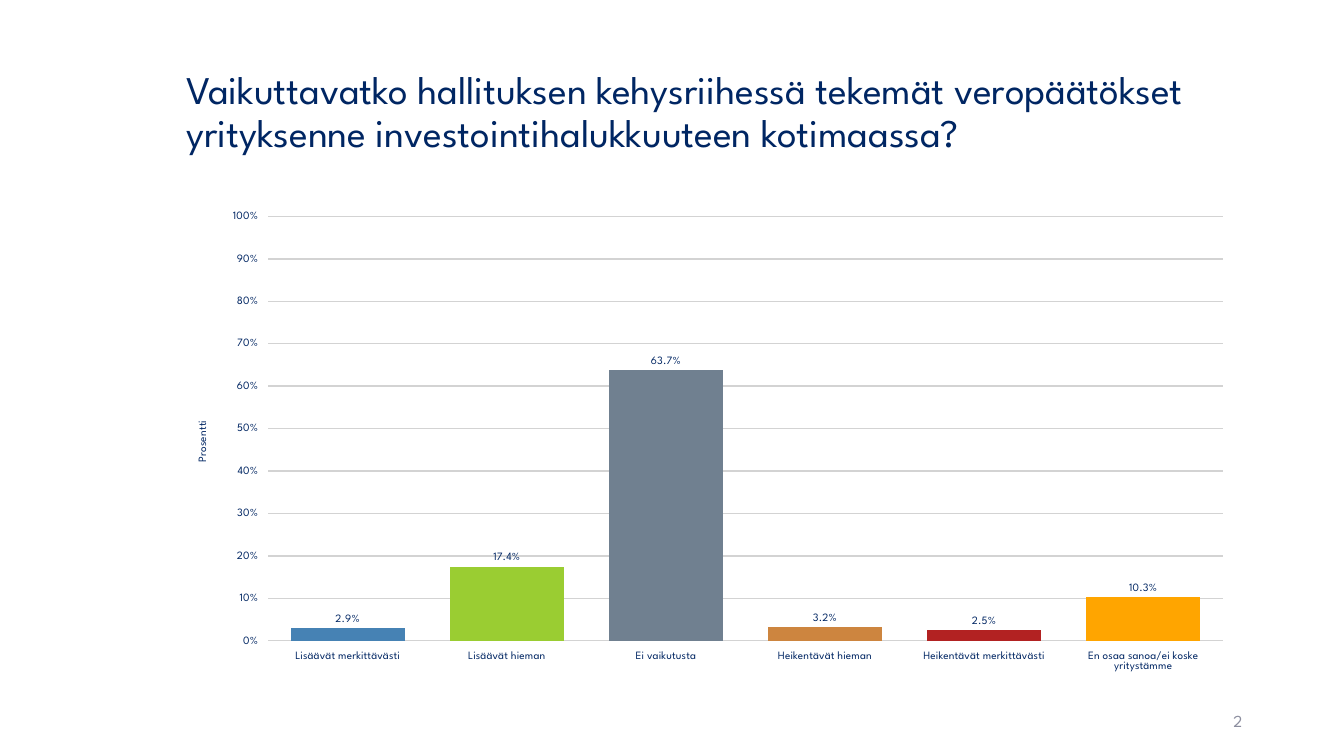
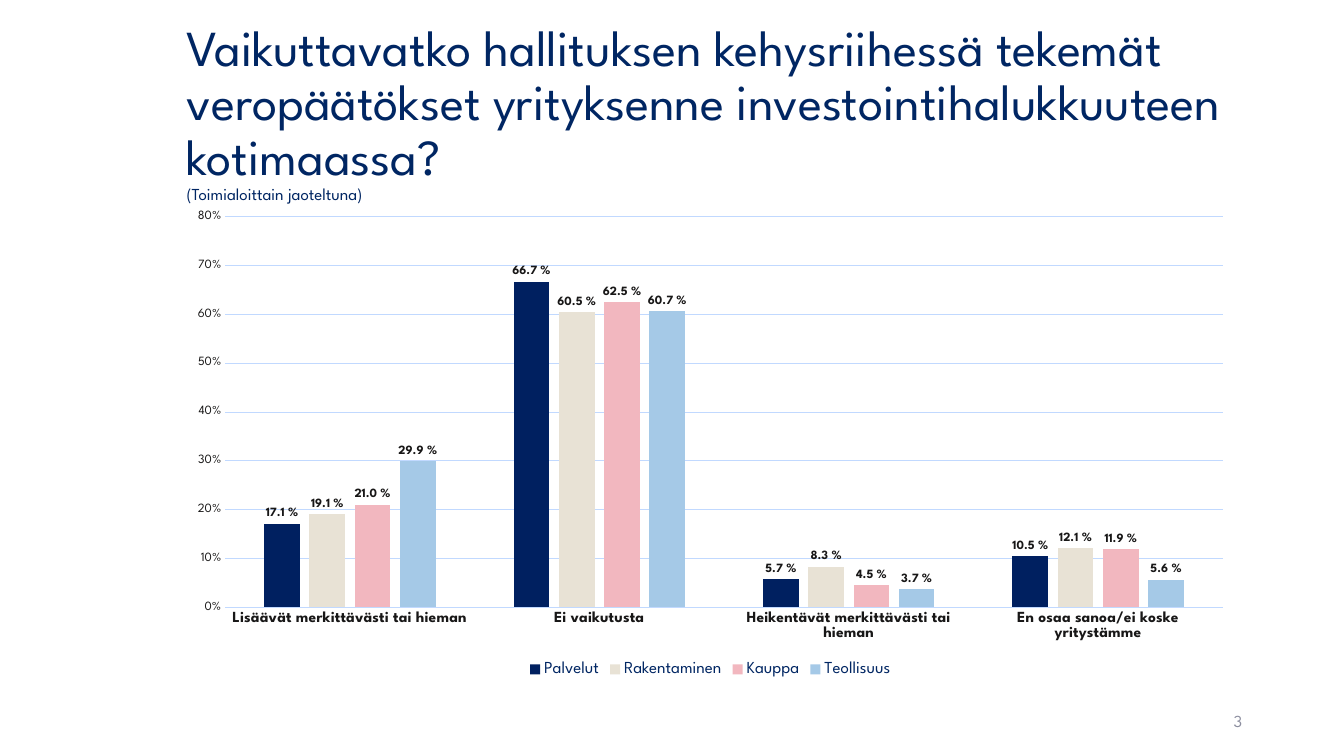
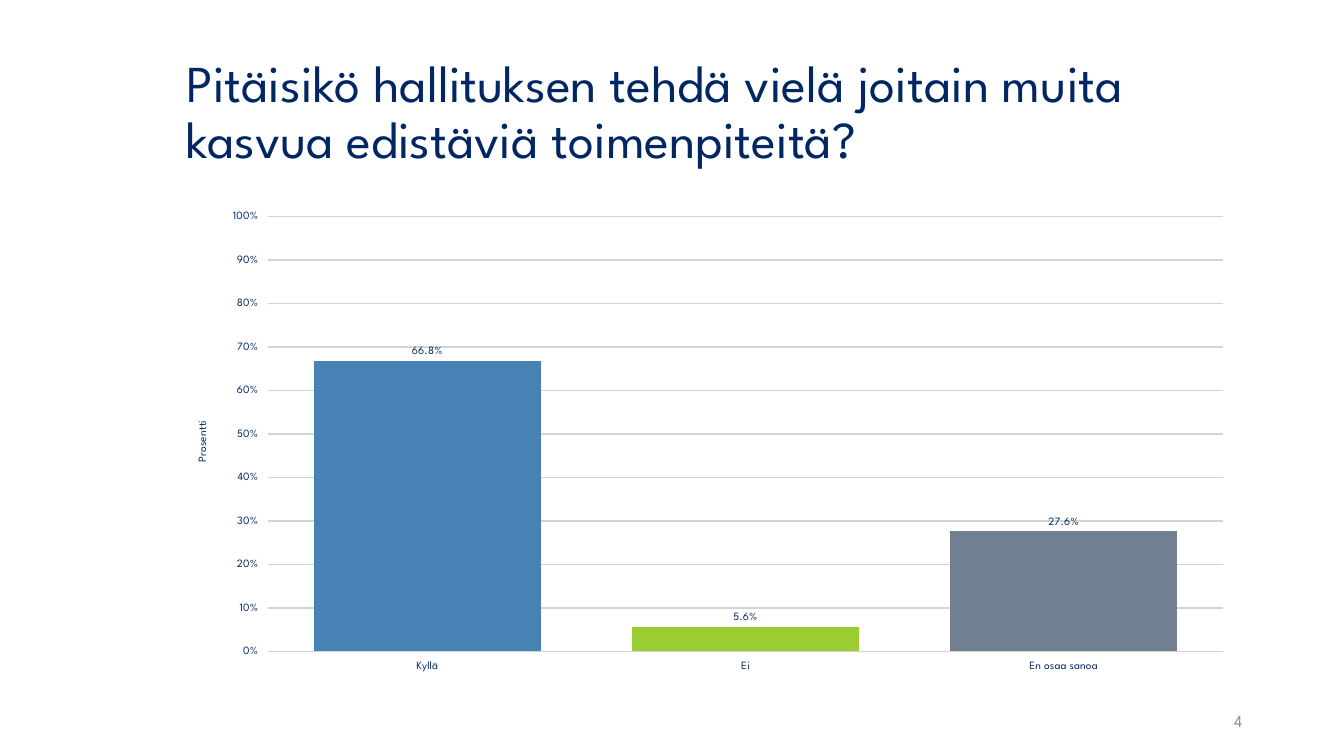
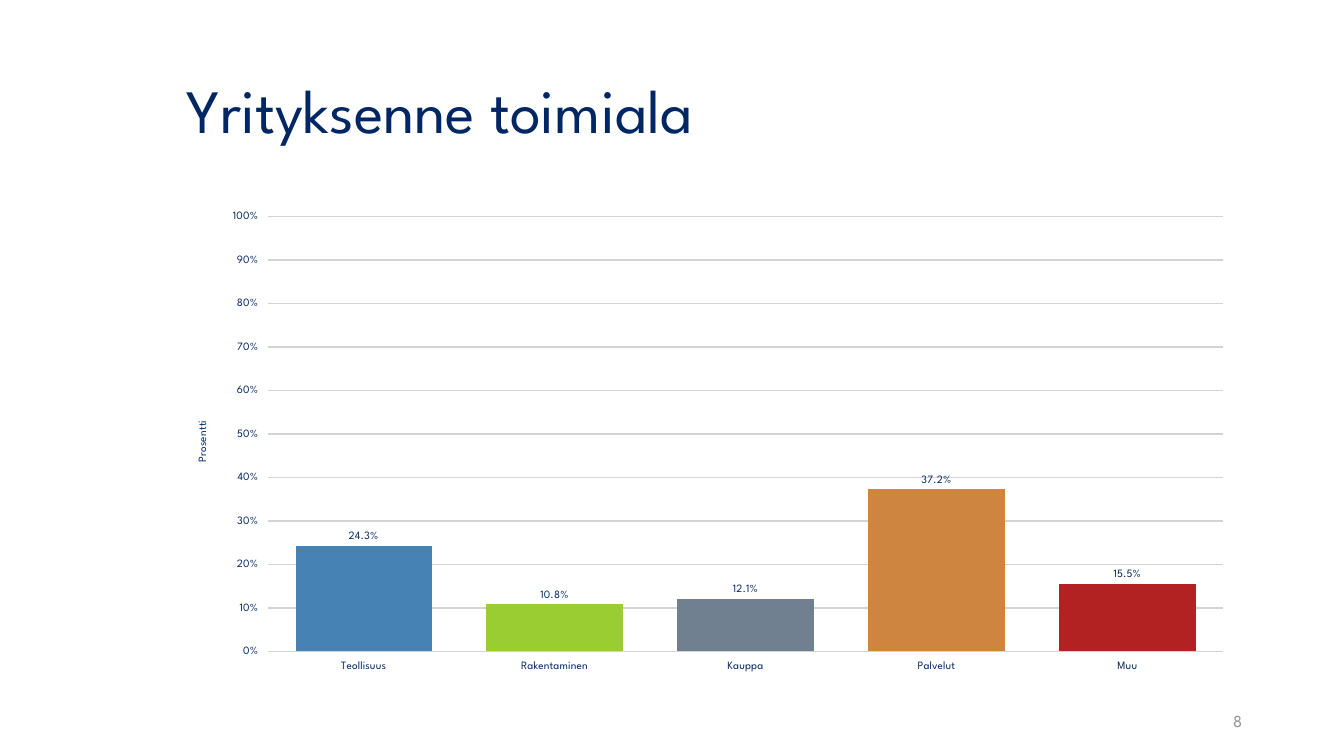
from lxml.etree import SubElement
from pptx import Presentation
from pptx.chart.data import CategoryChartData
from pptx.dml.color import RGBColor
from pptx.enum.chart import XL_CHART_TYPE, XL_LABEL_POSITION, XL_LEGEND_POSITION, XL_TICK_MARK
from pptx.enum.text import MSO_ANCHOR, MSO_AUTO_SIZE, PP_ALIGN
from pptx.oxml.ns import qn
from pptx.util import Inches, Pt

# Shared style
FONT = "League Spartan"
NAVY = RGBColor(0x00, 0x26, 0x63)
INK = RGBColor(0x18, 0x17, 0x17)
GREY = RGBColor(0x8C, 0x8E, 0x9F)
GRID_GREY = RGBColor(0xD3, 0xD3, 0xD3)
GRID_BLUE = RGBColor(0xC1, 0xD9, 0xFF)
ANSWER_COLOURS = [
    RGBColor(0x46, 0x82, 0xB4), RGBColor(0x9A, 0xCD, 0x32), RGBColor(0x70, 0x80, 0x90),
    RGBColor(0xCD, 0x85, 0x3F), RGBColor(0xB2, 0x22, 0x22), RGBColor(0xFF, 0xA5, 0x00),
]
SECTOR_COLOURS = [
    RGBColor(0x00, 0x20, 0x60), RGBColor(0xE8, 0xE2, 0xD5),
    RGBColor(0xF2, 0xB7, 0xBF), RGBColor(0xA5, 0xC9, 0xE7),
]
LEFT, WIDTH = Inches(1.75), Inches(10.59)

# Chart styles: one series coloured by answer, or one series per sector
SINGLE = {
    "size": 18, "gap": 40, "overlap": -2, "max": 1, "tick": XL_TICK_MARK.OUTSIDE,
    "grid": (GRID_GREY, 1), "labels": "0.0%",
    "cat_font": {"size": Pt(8), "bold": False}, "val_font": {"size": Pt(8), "bold": False},
    "label_font": {"size": Pt(8), "bold": False}, "text": NAVY,
}
GROUPED = {
    "size": 10, "gap": 219, "overlap": -27, "max": 0.8, "tick": XL_TICK_MARK.NONE,
    "grid": (GRID_BLUE, 0.75), "labels": "0.0\\ %",
    "cat_font": {"size": Pt(11), "bold": True}, "val_font": {"size": Pt(9), "bold": False},
    "label_font": {"size": Pt(9), "bold": True}, "text": INK,
}

# Slide contents
INVESTMENT = ("Vaikuttavatko hallituksen kehysriihessä tekemät veropäätökset "
              "yrityksenne investointihalukkuuteen kotimaassa?")
SLIDES = [
    {"number": 2, "title": INVESTMENT, "size": 28, "style": SINGLE,
     "cats": ["Lisäävät merkittävästi", "Lisäävät hieman", "Ei vaikutusta", "Heikentävät hieman",
              "Heikentävät merkittävästi", "En osaa sanoa/ei koske yritystämme"],
     "series": {"Series 1": [0.029, 0.174, 0.637, 0.032, 0.025, 0.103]}},
    {"number": 3, "title": INVESTMENT, "size": 36, "style": GROUPED,
     "subtitle": "(Toimialoittain jaoteltuna)",
     "cats": ["Lisäävät merkittävästi tai hieman", "Ei vaikutusta",
              "Heikentävät merkittävästi tai hieman", "En osaa sanoa/ei koske yritystämme"],
     "series": {"Palvelut": [0.171, 0.667, 0.057, 0.105],
                "Rakentaminen": [0.191, 0.605, 0.083, 0.121],
                "Kauppa": [0.21, 0.625, 0.045, 0.119],
                "Teollisuus": [0.299, 0.607, 0.037, 0.056]}},
    {"number": 4, "size": 37, "style": SINGLE,
     "title": "Pitäisikö hallituksen tehdä vielä joitain muita kasvua edistäviä toimenpiteitä?",
     "cats": ["Kyllä", "Ei", "En osaa sanoa"],
     "series": {"Series 1": [0.668, 0.056, 0.276]}},
    {"number": 8, "title": "Yrityksenne toimiala", "size": 44, "style": SINGLE,
     "cats": ["Teollisuus", "Rakentaminen", "Kauppa", "Palvelut", "Muu"],
     "series": {"Series 1": [0.243, 0.108, 0.121, 0.372, 0.155]}},
]


def set_font(font, color, **values):
    font.name = FONT
    font.color.rgb = color
    for name, value in values.items():
        setattr(font, name, value)


def add_run(p, text, size, color):
    r = p.add_run()
    r.text = text
    set_font(r.font, color, size=Pt(size))


prs = Presentation()
prs.slide_width, prs.slide_height = Inches(13.33), Inches(7.5)

# Title position, shared through the layout
layout = prs.slide_layouts[5]
title = layout.placeholders[0]
title.left, title.top, title.width, title.height = LEFT, Inches(0.4), WIDTH, Inches(1.45)

for content in SLIDES:
    s = prs.slides.add_slide(layout)
    style = content["style"]

    # Title
    tf = s.shapes.title.text_frame
    tf.auto_size = MSO_AUTO_SIZE.NONE
    tf.vertical_anchor = MSO_ANCHOR.MIDDLE
    p = tf.paragraphs[0]
    p.alignment = PP_ALIGN.LEFT
    p.line_spacing = 0.9
    add_run(p, content["title"], content["size"], NAVY)
    if "subtitle" in content:
        p.add_line_break()
        SubElement(p._p.find(qn("a:br")), qn("a:rPr"), sz=str(content["size"] * 100))
        add_run(p, content["subtitle"], 12, NAVY)

    # Slide number
    tf = s.shapes.add_textbox(Inches(9.42), Inches(6.95), Inches(3), Inches(0.4)).text_frame
    tf.word_wrap = True
    tf.vertical_anchor = MSO_ANCHOR.MIDDLE
    p = tf.paragraphs[0]
    p.alignment = PP_ALIGN.RIGHT
    add_run(p, str(content["number"]), 12, GREY)

    # Chart
    data = CategoryChartData(number_format="General")
    data.categories = content["cats"]
    for name, values in content["series"].items():
        data.add_series(name, values)
    chart = s.shapes.add_chart(XL_CHART_TYPE.COLUMN_CLUSTERED, LEFT, Inches(2),
                               WIDTH, Inches(4.76), data).chart
    chart.has_title = False
    set_font(chart.font, NAVY, size=Pt(style["size"]))

    # Axes
    cat_axis, val_axis = chart.category_axis, chart.value_axis
    for axis, font in ((cat_axis, "cat_font"), (val_axis, "val_font")):
        axis.major_tick_mark = style["tick"]
        axis.minor_tick_mark = XL_TICK_MARK.NONE
        axis.format.line.fill.background()
        set_font(axis.tick_labels.font, style["text"], **style[font])
    val_axis.minimum_scale, val_axis.maximum_scale, val_axis.major_unit = 0, style["max"], 0.1
    val_axis.tick_labels.number_format = "0%"
    val_axis.tick_labels.number_format_is_linked = False
    grid_color, grid_width = style["grid"]
    grid_lines = [val_axis.major_gridlines.format.line]
    if style is GROUPED:
        grid_lines.append(cat_axis.format.line)
    for line in grid_lines:
        line.color.rgb = grid_color
        line.width = Pt(grid_width)

    # Columns and value labels
    plot = chart.plots[0]
    plot.gap_width, plot.overlap, plot.vary_by_categories = style["gap"], style["overlap"], False
    colours = SECTOR_COLOURS if style is GROUPED else ANSWER_COLOURS
    for series, color in zip(plot.series, colours):
        series.format.fill.solid()
        series.format.fill.fore_color.rgb = color
        labels = series.data_labels
        labels.show_value = True
        labels.position = XL_LABEL_POSITION.OUTSIDE_END
        labels.number_format = style["labels"]
        labels.number_format_is_linked = False
        set_font(labels.font, style["text"], **style["label_font"])

    # Legend for sectors; axis title and answer colours for a single series
    chart.has_legend = style is GROUPED
    if style is GROUPED:
        chart.legend.position = XL_LEGEND_POSITION.BOTTOM
        chart.legend.include_in_layout = False
        set_font(chart.legend.font, NAVY, size=Pt(12))
    else:
        tf = val_axis.axis_title.text_frame
        tf._txBody.bodyPr.set("rot", "-5400000")
        tf._txBody.bodyPr.set("vert", "horz")
        add_run(tf.paragraphs[0], "Prosentti", 8, NAVY)
        tf.paragraphs[0].runs[0].font.bold = False
        for i, color in enumerate(colours[:len(content["cats"])]):
            fill = plot.series[0].points[i].format.fill
            fill.solid()
            fill.fore_color.rgb = color

prs.save("out.pptx")
